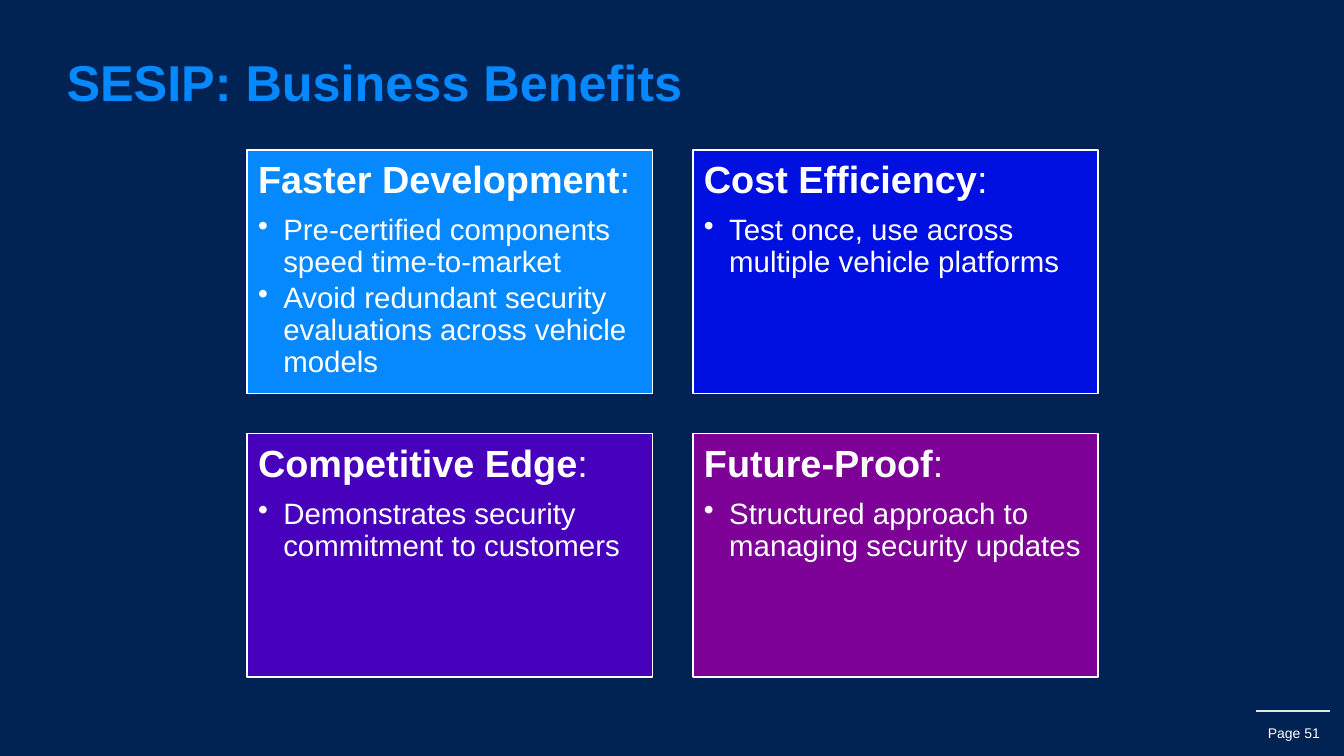
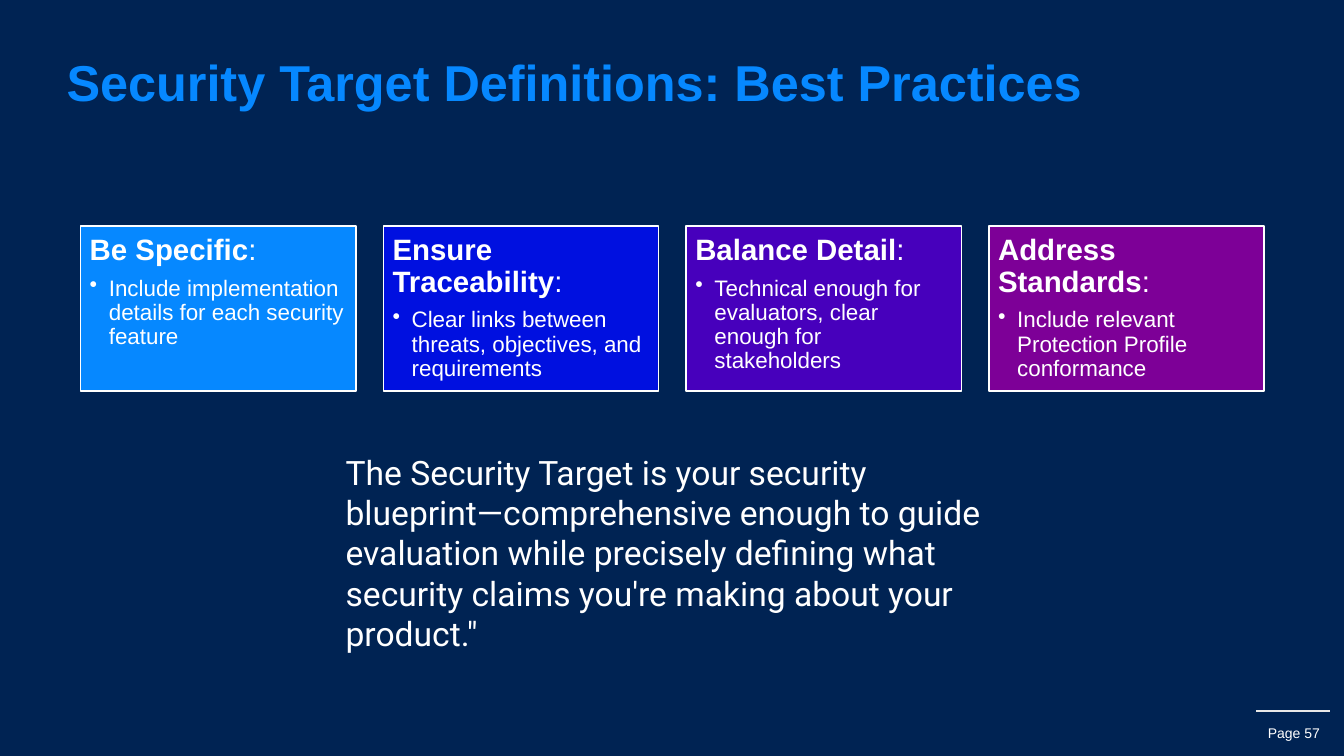
from lxml.etree import SubElement
from pptx import Presentation
from pptx.dml.color import RGBColor
from pptx.enum.shapes import MSO_CONNECTOR, MSO_SHAPE
from pptx.enum.text import MSO_ANCHOR, MSO_AUTO_SIZE, PP_ALIGN
from pptx.oxml.ns import qn
from pptx.util import Inches, Pt

NAVY = RGBColor(0x00, 0x23, 0x53)
SKY = RGBColor(0x06, 0x88, 0xFF)
BLUE = RGBColor(0x00, 0x10, 0xE0)
INDIGO = RGBColor(0x47, 0x00, 0xBC)
PURPLE = RGBColor(0x7D, 0x00, 0x97)
WHITE = RGBColor(0xFF, 0xFF, 0xFF)
PALE = RGBColor(0xE8, 0xE7, 0xE7)
CARD_FILLS = [SKY, BLUE, INDIGO, PURPLE]

GAP_SHARE = 0.1     # gap between cards, as a share of card width
HEIGHT_SHARE = 0.6  # card height, as a share of card width

BENEFITS = [
    ("Faster Development", ["Pre-certified components speed time-to-market",
                            "Avoid redundant security evaluations across vehicle models"]),
    ("Cost Efficiency", ["Test once, use across multiple vehicle platforms"]),
    ("Competitive Edge", ["Demonstrates security commitment to customers"]),
    ("Future-Proof", ["Structured approach to managing security updates"]),
]
PRACTICES = [
    ("Be Specific", ["Include implementation details for each security feature"]),
    ("Ensure Traceability", ["Clear links between threats, objectives, and requirements"]),
    ("Balance Detail", ["Technical enough for evaluators, clear enough for stakeholders"]),
    ("Address Standards", ["Include relevant Protection Profile conformance"]),
]
BENEFITS_GRID = dict(columns=2, left=2.45, top=1.49, width=4.02)
BENEFITS_TEXT = dict(head=27, body=21, inset=0.11, indent=0.25)
PRACTICES_GRID = dict(columns=4, left=0.8, top=2.24, width=2.73)
PRACTICES_TEXT = dict(head=21, body=16, inset=0.09, indent=0.19)
BLUEPRINT = ("The Security Target is your security blueprint—comprehensive enough to guide "
             "evaluation while precisely defining what security claims you're making about "
             "your product.\"")


def set_attrs(obj, **values):
    for name, value in values.items():
        setattr(obj, name, value)


def set_insets(tf, inset):
    for side in ("left", "top", "right", "bottom"):
        setattr(tf, f"margin_{side}", Inches(inset))


def add_run(p, text, size, color=WHITE, name="Arial", bold=False):
    r = p.add_run()
    r.text = text
    set_attrs(r.font, size=Pt(size), name=name, bold=bold)
    r.font.color.rgb = color
    return r


def add_text(s, box, text, size, inset=0.1, align=PP_ALIGN.LEFT, name="Arial"):
    tf = s.shapes.add_textbox(*map(Inches, box)).text_frame
    tf.word_wrap = True
    set_insets(tf, inset)
    p = tf.paragraphs[0]
    p.alignment = align
    add_run(p, text, size, name=name)
    return tf


def style_layout(prs):
    """Give the title-only layout the shared background and title frame."""
    layout = prs.slide_layouts[5]
    layout.background.fill.solid()
    layout.background.fill.fore_color.rgb = NAVY
    title = next(sp for sp in layout.placeholders if sp.placeholder_format.idx == 0)
    set_attrs(title, left=Inches(0.66), top=Inches(0.58),
              width=Inches(11.73), height=Inches(0.45))
    tf = title.text_frame
    set_attrs(tf, vertical_anchor=MSO_ANCHOR.TOP, auto_size=MSO_AUTO_SIZE.NONE)
    set_insets(tf, 0)
    return layout


def add_footer(s, page):
    line = s.shapes.add_connector(MSO_CONNECTOR.STRAIGHT, Inches(12.46), Inches(7.05),
                                  Inches(13.19), Inches(7.05))
    line.line.color.rgb = PALE
    line.line.width = Pt(1.5)
    SubElement(line._element.spPr, qn("a:effectLst"))
    add_text(s, (12.22, 7.19, 0.87, 0.2), f"Page {page}", 10, inset=0, align=PP_ALIGN.RIGHT)


def add_slide(prs, layout, title, page):
    s = prs.slides.add_slide(layout)
    p = s.shapes.title.text_frame.paragraphs[0]
    set_attrs(p, alignment=PP_ALIGN.LEFT, line_spacing=0.9)
    r = add_run(p, title, 36, SKY, bold=True)
    outline = r.font._element.makeelement(qn("a:ln"), {"w": str(Pt(0.75))})
    r.font._element.insert(0, outline)
    fill = SubElement(outline, qn("a:solidFill"))
    SubElement(fill, qn("a:srgbClr"), val=str(SKY))
    add_footer(s, page)
    return s


def add_bullet(tf, text, size, indent):
    p = tf.add_paragraph()
    pPr = p._p.get_or_add_pPr()
    pPr.set("marL", str(Inches(indent)))
    pPr.set("indent", str(-Inches(indent)))
    SubElement(pPr, qn("a:buChar"), char="•")
    set_attrs(p, level=1, alignment=PP_ALIGN.LEFT, line_spacing=0.9,
              space_after=Pt(size * 0.15))
    add_run(p, text, size)


def add_card(s, box, color, heading, bullets, head, body, inset, indent):
    sp = s.shapes.add_shape(MSO_SHAPE.RECTANGLE, *map(Inches, box))
    sp.shadow.inherit = False
    sp.fill.solid()
    sp.fill.fore_color.rgb = color
    sp.line.color.rgb = WHITE
    sp.line.width = Pt(1)
    tf = sp.text_frame
    set_attrs(tf, word_wrap=True, vertical_anchor=MSO_ANCHOR.TOP)
    set_insets(tf, inset)
    p = tf.paragraphs[0]
    set_attrs(p, alignment=PP_ALIGN.LEFT, line_spacing=0.9, space_after=Pt(head * 0.35))
    add_run(p, heading, head, bold=True)
    add_run(p, ":", head)
    for bullet in bullets:
        add_bullet(tf, bullet, body, indent)


def add_cards(s, cards, text_format, columns, left, top, width):
    height, gap = width * HEIGHT_SHARE, width * GAP_SHARE
    for i, (color, (heading, bullets)) in enumerate(zip(CARD_FILLS, cards)):
        row, col = divmod(i, columns)
        box = (left + col * (width + gap), top + row * (height + gap), width, height)
        add_card(s, box, color, heading, bullets, **text_format)


def main():
    prs = Presentation()
    set_attrs(prs, slide_width=Inches(13.33), slide_height=Inches(7.5))
    layout = style_layout(prs)

    s = add_slide(prs, layout, "SESIP: Business Benefits", 51)
    add_cards(s, BENEFITS, BENEFITS_TEXT, **BENEFITS_GRID)

    s = add_slide(prs, layout, "Security Target Definitions: Best Practices", 57)
    add_cards(s, PRACTICES, PRACTICES_TEXT, **PRACTICES_GRID)
    tf = add_text(s, (3.33, 4.43, 6.67, 1.72), BLUEPRINT, 24, name="Roboto")
    set_attrs(tf, margin_top=Inches(0.05), margin_bottom=Inches(0.05),
              auto_size=MSO_AUTO_SIZE.SHAPE_TO_FIT_TEXT)

    prs.save("out.pptx")


if __name__ == "__main__":
    main()
